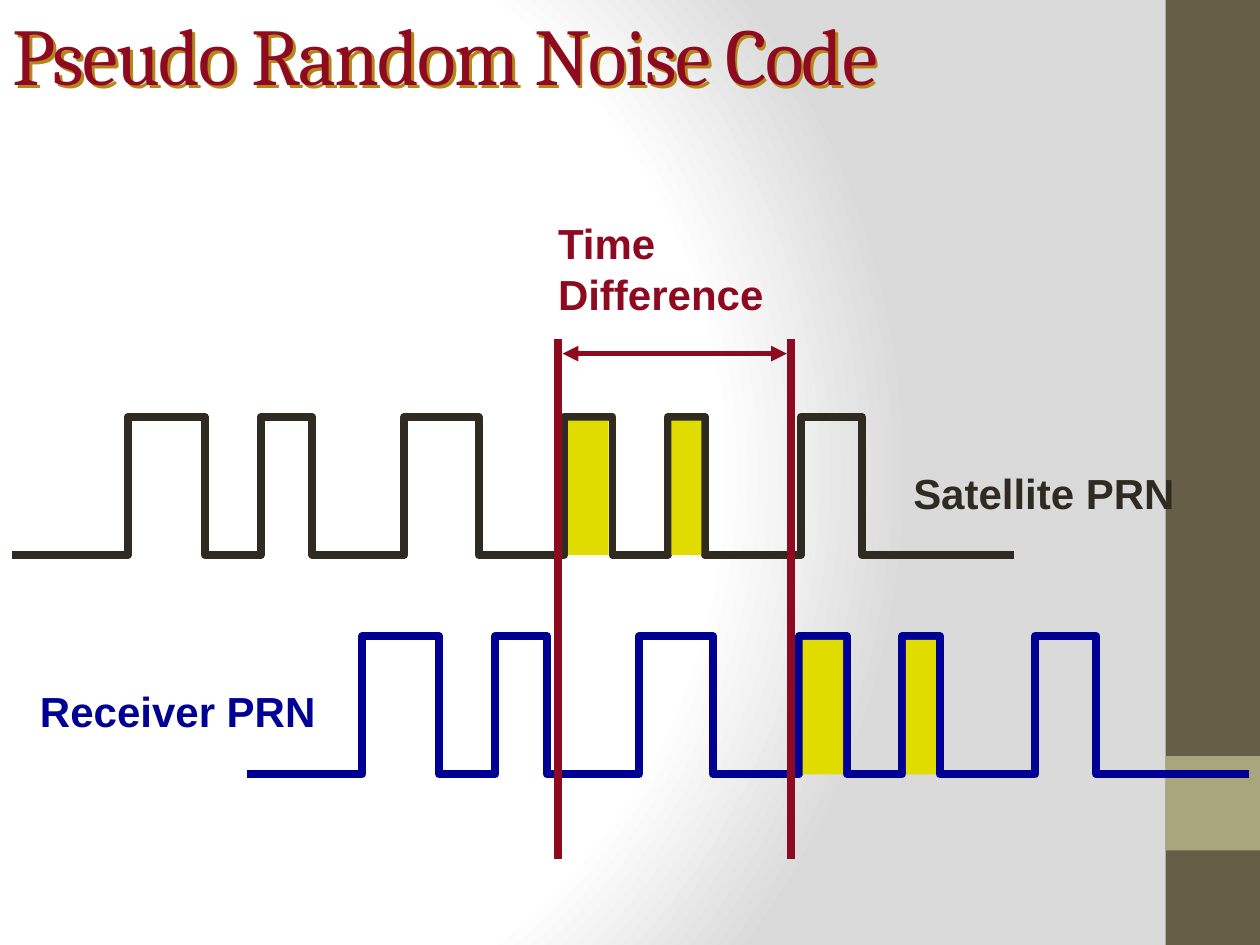
from lxml import etree
from pptx import Presentation
from pptx import util as u
from pptx.dml.color import RGBColor
from pptx.enum import shapes, text
from pptx.oxml import parse_xml
from pptx.oxml.ns import nsdecls, qn

Pt = u.Pt
RED, BLUE, DARK, YELLOW = "8E0A20", "000094", "2F2B20", "E1DC00"
BROWN, KHAKI, GOLD = "675E47", "A9A57C", "B5861A"
WIDTH, HEIGHT = 720, 540
RECTANGLE = shapes.MSO_SHAPE.RECTANGLE
STRAIGHT = shapes.MSO_CONNECTOR.STRAIGHT

presentation = Presentation()
presentation.slide_width, presentation.slide_height = Pt(WIDTH), Pt(HEIGHT)
slide = presentation.slides.add_slide(presentation.slide_layouts[6])


def color(hex_value):
    return RGBColor.from_string(hex_value)


def add_text(content, left, top, width, height, size=24, font="Arial",
             hex_color=DARK, bold=True, spacing=0, line_height=28.8,
             anchor=text.MSO_ANCHOR.TOP):
    """Add a one-paragraph text box; spacing is between letters, in points."""
    box = slide.shapes.add_textbox(Pt(left), Pt(top), Pt(width), Pt(height))
    frame = box.text_frame
    frame.word_wrap = True
    frame.vertical_anchor = anchor
    paragraph = frame.paragraphs[0]
    if line_height:
        paragraph.line_spacing = Pt(line_height)
    run = paragraph.add_run()
    run.text = content
    run.font.size, run.font.name, run.font.bold = Pt(size), font, bold
    run.font.color.rgb = color(hex_color)
    run.font._element.set("spc", str(spacing * 100))
    return box


# Background: white circle fading to grey
slide._element.cSld.insert(0, parse_xml(
    f'<p:bg {nsdecls("p", "a")}><p:bgPr><a:gradFill rotWithShape="1"><a:gsLst>'
    '<a:gs pos="0"><a:srgbClr val="FFFFFF"/></a:gs>'
    '<a:gs pos="75000"><a:srgbClr val="FFFFFF"/></a:gs>'
    '<a:gs pos="100000"><a:srgbClr val="DADADA"/></a:gs></a:gsLst>'
    '<a:path path="circle">'
    '<a:fillToRect l="20000" t="50000" r="100000" b="50000"/></a:path>'
    '</a:gradFill><a:effectLst/></p:bgPr></p:bg>'))

# Shapes are added from back to front; these lists collect them for styling.
filled = []    # (shape, colour)
outlined = []  # (shape, colour, line width)

# Side band with its lighter square
band_width = 54
for top, height, hex_color in [(0, HEIGHT, BROWN), (432, band_width, KHAKI)]:
    band = slide.shapes.add_shape(RECTANGLE, Pt(WIDTH - band_width), Pt(top),
                                  Pt(band_width), Pt(height))
    filled.append((band, hex_color))

# Title with a gold shadow
title = add_text("Pseudo Random Noise Code", 0, 0, WIDTH, 61.2, size=46,
                 font="Cambria", hex_color=RED, bold=False, spacing=-1,
                 line_height=None, anchor=text.MSO_ANCHOR.MIDDLE)
title._element.spPr.append(parse_xml(
    f'<a:effectLst {nsdecls("a")}><a:outerShdw dist="25400" dir="2400000">'
    f'<a:srgbClr val="{GOLD}"/></a:outerShdw></a:effectLst>'))

# Both signals carry the same code: (rise, fall) of each pulse from its start
pulses = [(66, 110), (142, 171.5), (224, 266.5),
          (315.5, 343), (374.5, 396), (450.5, 485.5)]
highlighted_pulses = pulses[3:5]
signal_length, pulse_height, stroke = 572.5, 79, 4.5
signals = [(141, 363.5, BLUE), (7, 238.2, DARK)]  # start, top, colour

for start, top, hex_color in signals:
    bottom = top + pulse_height
    corners = []
    for rise, fall in pulses:
        corners += [(rise, bottom), (rise, top), (fall, top), (fall, bottom)]
    corners.append((signal_length, bottom))
    builder = slide.shapes.build_freeform(Pt(start), Pt(bottom))
    builder.add_line_segments([(Pt(start + x), Pt(y)) for x, y in corners],
                              close=False)
    signal = builder.convert_to_shape()
    signal.shadow.inherit = False
    signal.fill.background()
    outlined.append((signal, hex_color, stroke))

# Time markers
marker_top, marker_bottom = 193.7, 491
satellite_time, receiver_time = 319, 452.2
for time in (receiver_time, satellite_time):
    marker = slide.shapes.add_connector(STRAIGHT, Pt(time), Pt(marker_bottom),
                                        Pt(time), Pt(marker_top))
    outlined.append((marker, RED, stroke))

# Yellow areas inside the highlighted pulses
inset = 2.2
for start, top, _ in signals:
    for rise, fall in highlighted_pulses:
        highlight = slide.shapes.add_shape(
            RECTANGLE, Pt(start + rise + inset), Pt(top + inset),
            Pt(fall - rise - 2 * inset), Pt(pulse_height - inset))
        filled.append((highlight, YELLOW))

# Double arrow between the markers
arrow_gap, arrow_y = 2.5, 202.1
arrow = slide.shapes.add_connector(
    STRAIGHT, Pt(satellite_time + arrow_gap), Pt(arrow_y),
    Pt(receiver_time - arrow_gap), Pt(arrow_y))
outlined.append((arrow, RED, 3))

# Labels
add_text("Receiver PRN", 15.8, 388.1, 227.5, 36, hex_color=BLUE)
add_text("Satellite PRN", 514.8, 263.5, 198.7, 36)
add_text("Time Difference", 311.8, 121, 163.4, 64.8, hex_color=RED)

# Styling
for shape, hex_color in filled:
    shape.shadow.inherit = False
    shape.fill.solid()
    shape.fill.fore_color.rgb = color(hex_color)
    shape.line.fill.background()

for shape, hex_color, width in outlined:
    shape.line.color.rgb = color(hex_color)
    shape.line.width = Pt(width)
    etree.SubElement(shape.line._get_or_add_ln(), qn("a:round"))

for end in ("a:headEnd", "a:tailEnd"):
    etree.SubElement(arrow.line._get_or_add_ln(), qn(end), type="triangle")

for connector in slide.shapes:
    if connector.shape_type == shapes.MSO_SHAPE_TYPE.LINE:
        etree.SubElement(connector._element.spPr, qn("a:effectLst"))

presentation.save("out.pptx")
